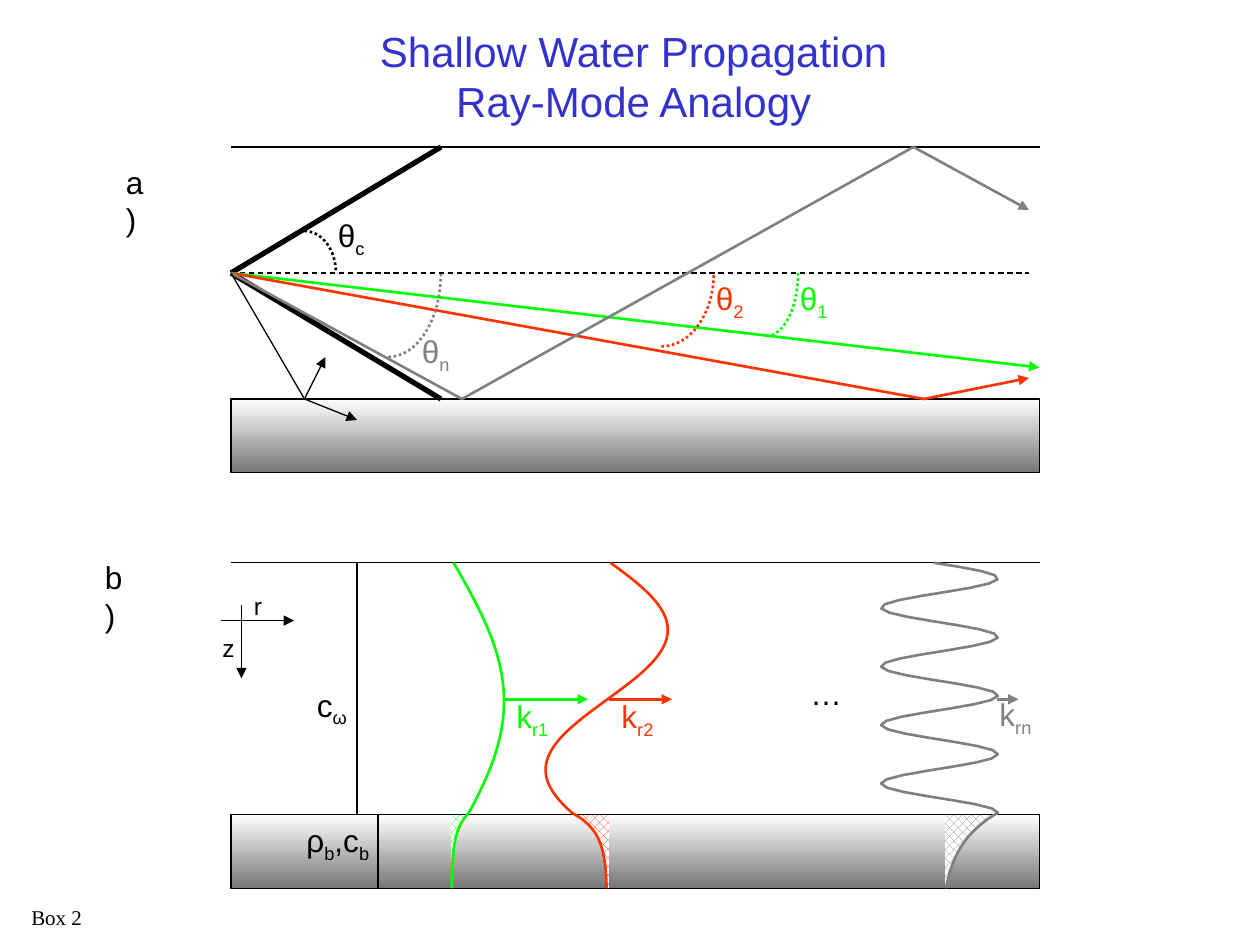
import math
from itertools import pairwise

from lxml import etree
from pptx import Presentation
from pptx import util as u
from pptx.dml.color import RGBColor
from pptx.enum import dml, shapes, text
from pptx.oxml.ns import qn

COLORS = {"black": "000000", "white": "FFFFFF", "shade": "767676", "title": "3333CC",
          "green": "00FF00", "red": "FF3300", "gray": "808080"}
RGB = {name: RGBColor.from_string(value) for name, value in COLORS.items()}

presentation = Presentation()
presentation.slide_width, presentation.slide_height = u.Inches(10), u.Inches(7.5)
slide = presentation.slides.add_slide(presentation.slide_layouts[5])

# Positions below are columns and rows of a 120 by 90 grid.
CELL = presentation.slide_width / 120
LEFT, RIGHT = 22, 99
SURFACE_A, SOURCE, BOTTOM_A = 14, 26, 38
SURFACE_B, AXIS, BOTTOM_B = 53.6, 66.6, 77.6
SEDIMENT = 7


def draw_path(points, color="black", width=0.75, dash=None, arrow=False):
    """Draw a straight connector through two points, or an open outline through more."""
    corners = [(round(x * CELL), round(y * CELL)) for x, y in points]
    if len(corners) == 2:
        shape = slide.shapes.add_connector(shapes.MSO_CONNECTOR.STRAIGHT, *corners[0], *corners[1])
    else:
        builder = slide.shapes.build_freeform(*corners[0])
        builder.add_line_segments(corners[1:], close=False)
        shape = builder.convert_to_shape()
        shape.fill.background()
    shape.line.color.rgb = RGB[color]
    shape.line.width = u.Pt(width)
    if dash:
        shape.line.dash_style = dash
    properties = shape._element.spPr
    if arrow:
        etree.SubElement(properties.find(qn("a:ln")), qn("a:tailEnd"), type="triangle")
    etree.SubElement(properties, qn("a:effectLst"))


def add_label(column, row, width, runs, color="black", size=18, font="Arial", wrap=True):
    """Add a text box; every second run is a subscript."""
    box = slide.shapes.add_textbox(*(round(v * CELL) for v in (column, row, width, size / 4.5 + 0.8)))
    box.text_frame.word_wrap = wrap
    for index, content in enumerate(runs):
        run = box.text_frame.paragraphs[0].add_run()
        run.text = content
        for name, value in {"size": u.Pt(size), "name": font}.items():
            setattr(run.font, name, value)
        run.font.color.rgb = RGB[color]
        if index % 2:
            run._r.get_or_add_rPr().set("baseline", "-25000")


# Title
title = slide.shapes.title
for name, value in {"left": 34.9, "top": 1.8, "width": 50.9, "height": 10.8}.items():
    setattr(title, name, round(value * CELL))
frame = title.text_frame
frame.text = "Shallow Water Propagation\nRay-Mode Analogy"
for name, value in {"word_wrap": False, "auto_size": text.MSO_AUTO_SIZE.NONE,
                    "vertical_anchor": text.MSO_ANCHOR.MIDDLE}.items():
    setattr(frame, name, value)
for paragraph in frame.paragraphs:
    paragraph.alignment = text.PP_ALIGN.CENTER
    for name, value in {"size": u.Pt(24), "name": "Arial"}.items():
        setattr(paragraph.font, name, value)
    paragraph.font.color.rgb = RGB["title"]

# Water surface and sediment of both panels
for surface, bottom in ((SURFACE_A, BOTTOM_A), (SURFACE_B, BOTTOM_B)):
    sediment = slide.shapes.add_shape(
        shapes.MSO_SHAPE.RECTANGLE,
        *(round(v * CELL) for v in (LEFT, bottom, RIGHT - LEFT, SEDIMENT)))
    sediment.shadow.inherit = False
    sediment.fill.gradient()
    sediment.fill.gradient_angle = 270
    for stop, color in zip(sediment.fill.gradient_stops, ("white", "shade")):
        stop.color.rgb = RGB[color]
    sediment.line.color.rgb = RGB["black"]
    sediment.line.width = u.Pt(0.75)
    draw_path([(LEFT, surface), (RIGHT, surface)])

# Panel a: rays, each a chain of segments from the source
source = (LEFT, SOURCE)
for end in (BOTTOM_A, SURFACE_A):
    draw_path([source, (42, end)], width=3)
draw_path([source, (98, SOURCE)], dash=dml.MSO_LINE.DASH)
rays = [
    ("green", 1.5, [source, (99, 35)]),
    ("red", 1.5, [source, (88, BOTTOM_A), (98, 36)]),
    ("gray", 1.5, [source, (44, BOTTOM_A), (87, SURFACE_A), (98, 20)]),
    ("black", 0.75, [source, (29, BOTTOM_A), (31, 34)]),
    ("black", 0.75, [(29, BOTTOM_A), (34, 40)]),
]
for color, width, points in rays:
    for segment in pairwise(points):
        draw_path(segment, color, width, arrow=segment[1] == points[-1])

# Panel a: angles as quarter ellipses, with their labels
angles = [
    ("c", "black", 29, 3, -4, 31, 20),
    ("1", "green", 73, 3, 6, 75, 26),
    ("2", "red", 63, 5, 7, 67, 26),
    ("n", "gray", 37, 5, 8, 39, 31),
]
for subscript, color, centre, width, height, column, row in angles:
    turns = [math.pi / 2 * step / 16 for step in range(17)]
    draw_path([(centre + width * math.sin(t), SOURCE + height * math.cos(t)) for t in turns],
              color, 1.5, dash=dml.MSO_LINE.ROUND_DOT)
    add_label(column, row, 6, ["θ", subscript], color)

# Panel b: modes are sines in the water with an exponential tail in the sediment
JOIN, FLOOR = 77.4, BOTTOM_B + SEDIMENT
modes = [  # colour, centre, amplitude, wavelength, zero row, tail base, tail length, hatch edge
    ("red", 57.78, 5.82, 26.64, 53.34, 57.84, 1.8, 58),
    ("green", 43.2, 4.8, 52.8, SURFACE_B, 43, 1.68, 43),
    ("gray", 89.48, 5.56, 24 / 4.3, 53.69, 89.5, 3.24, 90),
]
for color, centre, amplitude, wavelength, zero, base, length, edge in modes:
    rows = [SURFACE_B + (JOIN - SURFACE_B) * step / 60 for step in range(61)]
    water = [(centre + amplitude * math.sin(2 * math.pi * (y - zero) / wavelength), y) for y in rows]
    reach = water[-1][0] - base
    rows = [JOIN + (FLOOR - JOIN) * step / 12 for step in range(1, 13)]
    tail = [(base + reach * math.exp((JOIN - y) / length), y) for y in rows]

    corners = [(round(x * CELL), round(y * CELL))
               for x, y in [(edge, BOTTOM_B), (water[-1][0], BOTTOM_B), *tail, (edge, FLOOR)]]
    builder = slide.shapes.build_freeform(*corners[0])
    builder.add_line_segments(corners[1:])
    hatch = builder.convert_to_shape()
    hatch.shadow.inherit = False
    hatch.fill.patterned()
    hatch.fill.pattern = dml.MSO_PATTERN.PERCENT_50
    hatch.fill.fore_color.rgb = RGB[color]
    hatch.fill.back_color.rgb = RGB["white"]
    hatch.line.fill.background()
    draw_path(water + tail, color, 1.5)

# Panel b: wavenumbers
for subscript, color, start, end, column, row in (("r1", "green", 48, 56, 48, 65.8),
                                                  ("r2", "red", 58, 64, 58, 65.8),
                                                  ("rn", "gray", 95, 97, 94, 65.6)):
    draw_path([(start, AXIS), (end, AXIS)], color, 1.5, arrow=True)
    add_label(column, row, 9, ["k", subscript], color)

# Panel b: axes and profiles
draw_path([(34, SURFACE_B), (34, BOTTOM_B)])
draw_path([(36, BOTTOM_B), (36, FLOOR)])
draw_path([(21, 59.1), (28, 59.1)], arrow=True)
draw_path([(23, 57.6), (23, 64.6)], arrow=True)
add_label(23, 55.7, 4.2, ["r"], size=14)
add_label(20, 59.7, 4.2, ["z"], size=14)
add_label(28, BOTTOM_B, 9, ["ρ", "b", ",c", "b"])
add_label(29, 64.7, 9, ["c", "ω"])
add_label(76, 63.6, 7, ["…"])

# Panel names and footer
add_label(10.8, 14.9, 5, ["a)"], wrap=False)
add_label(8.8, 52.6, 5, ["b)"], wrap=False)
add_label(1.8, 85.6, 7.2, ["Box 2"], size=12, font="Times New Roman", wrap=False)

presentation.save("out.pptx")
